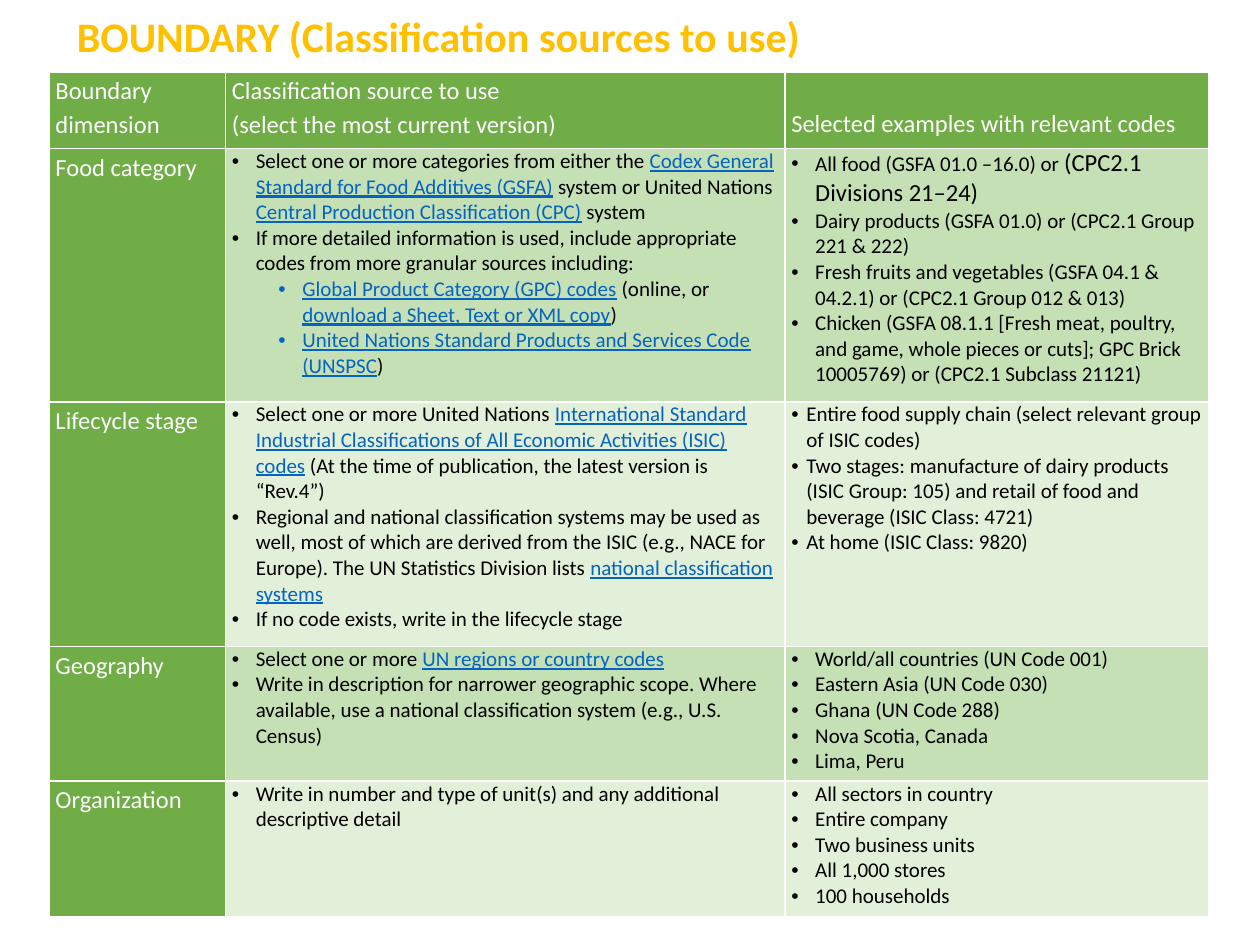
from lxml.etree import SubElement as Sub
from pptx import Presentation
from pptx.dml.color import RGBColor
from pptx.enum.text import MSO_ANCHOR as Anchor, PP_ALIGN as Align
from pptx.oxml.ns import qn
from pptx.util import Inches, Pt

GREEN, MID, PALE = "70AD47", "C5E0B4", "E2F0D9"
WHITE, BLACK, BLUE, GOLD = "FFFFFF", "000000", "0563C1", "FFC000"
COL_WIDTHS = [1.4, 4.44, 3.36]
ROW_HEIGHTS = [0.61, 2.01, 1.94, 1.07, 1.08]
LINK = {"color": BLUE, "underline": True}
LARGE = {"size": 14}

HEADERS = [
    ["Boundary dimension"],
    ["Classification source to use", "(select the most current version)"],
    ["Selected examples with relevant codes"],
]
ROWS = [
    ("Food category", [
        (0, ["Select one or more categories from either the ",
             ("Codex General Standard for Food Additives (GSFA)", LINK),
             " system or United Nations ",
             ("Central Production Classification (CPC)", LINK), " system"]),
        (0, ["If more detailed information is used, include appropriate codes "
             "from more granular sources including:"]),
        (1, [("Global Product Category (GPC) codes", LINK), " (online, or ",
             ("download a Sheet, Text or XML copy", LINK), ")"]),
        (1, [("United Nations Standard Products and Services Code (UNSPSC", LINK), ")"]),
    ], [
        ["All food (GSFA 01.0 –16.0) or ", ("(CPC2.1 Divisions 21–24)", LARGE)],
        ["Dairy products (GSFA 01.0) or (CPC2.1 Group 221 & 222)"],
        ["Fresh fruits and vegetables (GSFA 04.1 & 04.2.1) or (CPC2.1 Group 012 & 013)"],
        ["Chicken (GSFA 08.1.1 [Fresh meat, poultry, and game, whole pieces or cuts]; "
         "GPC Brick 10005769) or (CPC2.1 Subclass 21121)"],
    ], 0.19),
    ("Lifecycle stage", [
        (0, ["Select one or more United Nations ",
             ("International Standard Industrial Classifications of All Economic "
              "Activities (ISIC) codes", LINK),
             " (At the time of publication, the latest version is “Rev.4”)"]),
        (0, ["Regional and national classification systems may be used as well, most of "
             "which are derived from the ISIC (e.g., NACE for Europe). The UN Statistics "
             "Division lists ", ("national classification systems", LINK)]),
        (0, ["If no code exists, write in the lifecycle stage"]),
    ], [
        ["Entire food supply chain (select relevant group of ISIC codes)"],
        ["Two stages: manufacture of dairy products (ISIC Group: 105) and retail of "
         "food and beverage (ISIC Class: 4721)"],
        ["At home (ISIC Class: 9820)"],
    ], 0.12),
    ("Geography", [
        (0, ["Select one or more ", ("UN regions or country codes", LINK)]),
        (0, ["Write in description for narrower geographic scope. Where available, use a "
             "national classification system (e.g., U.S. Census)"]),
    ], [
        ["World/all countries (UN Code 001)"], ["Eastern Asia (UN Code 030)"],
        ["Ghana (UN Code 288)"], ["Nova Scotia, Canada"], ["Lima, Peru"],
    ], 0.19),
    ("Organization", [
        (0, ["Write in number and type of unit(s) and any additional descriptive detail"]),
    ], [
        ["All sectors in country"], ["Entire company"], ["Two business units"],
        ["All 1,000 stores"], ["100 households"],
    ], 0.19),
]


def rgb(value):
    return RGBColor.from_string(value)


def add_run(p, text, size, color, bold=False, underline=False):
    r = p.add_run()
    r.text = text
    r.font.name = "Calibri"
    r.font.size = Pt(size)
    r.font.bold = bold
    r.font.underline = underline
    r.font.color.rgb = rgb(color)


def next_paragraph(tf, index):
    return tf.add_paragraph() if index else tf.paragraphs[0]


def set_bullet(p, left, hang):
    pPr = p._p.get_or_add_pPr()
    pPr.set("marL", str(Inches(left)))
    pPr.set("indent", str(-Inches(hang)))
    Sub(pPr, qn("a:buFont")).set("typeface", "Arial")
    Sub(pPr, qn("a:buChar")).set("char", "•")


def style_cell(cell, fill):
    cell.margin_left = cell.margin_right = Inches(0.05)
    cell.margin_top = cell.margin_bottom = 0
    tcPr = cell._tc.get_or_add_tcPr()
    for side in "LRTB":
        ln = Sub(tcPr, qn(f"a:ln{side}"))
        ln.set("w", str(Pt(1)))
        Sub(Sub(ln, qn("a:solidFill")), qn("a:srgbClr")).set("val", WHITE)
    cell.fill.solid()
    cell.fill.fore_color.rgb = rgb(fill)


def fill_heading(cell, lines):
    style_cell(cell, GREEN)
    for i, line in enumerate(lines):
        p = next_paragraph(cell.text_frame, i)
        p.line_spacing = 1.15
        add_run(p, line, 14, WHITE)


def fill_bullets(cell, items, fill, hang=0.19):
    style_cell(cell, fill)
    for i, (level, runs) in enumerate(items):
        p = next_paragraph(cell.text_frame, i)
        p.level = level
        set_bullet(p, hang + 0.37 * level, hang)
        for run in runs:
            text, style = (run, {}) if isinstance(run, str) else run
            add_run(p, text, **{"size": 12, "color": BLACK, **style})


def add_title(s, text):
    sp = s.shapes.title
    sp.left, sp.top, sp.width, sp.height = map(Inches, (0.51, 0.02, 9.25, 0.58))
    tf = sp.text_frame
    tf.word_wrap = True
    tf.vertical_anchor = Anchor.MIDDLE
    p = tf.paragraphs[0]
    p.alignment = Align.LEFT
    p.line_spacing = 0.9
    add_run(p, text, 24, GOLD, bold=True)


def add_boundary_table(s):
    frame = s.shapes.add_table(len(ROW_HEIGHTS), len(COL_WIDTHS), Inches(0.39), Inches(0.57),
                               Inches(sum(COL_WIDTHS)), Inches(sum(ROW_HEIGHTS)))
    table = frame.table
    table.first_row = table.horz_banding = False
    for column, width in zip(table.columns, COL_WIDTHS):
        column.width = Inches(width)
    for row, height in zip(table.rows, ROW_HEIGHTS):
        row.height = Inches(height)
    for col, lines in enumerate(HEADERS):
        fill_heading(table.cell(0, col), lines)
    examples_header = table.cell(0, 2)
    examples_header.vertical_anchor = Anchor.BOTTOM
    examples_header.margin_bottom = Inches(0.08)
    for row, (dimension, sources, examples, hang) in enumerate(ROWS, 1):
        fill = MID if row % 2 else PALE
        fill_heading(table.cell(row, 0), [dimension])
        fill_bullets(table.cell(row, 1), sources, fill)
        fill_bullets(table.cell(row, 2), [(0, runs) for runs in examples], fill, hang)


def main():
    prs = Presentation()
    prs.slide_width, prs.slide_height = Inches(10), Inches(7.5)
    s = prs.slides.add_slide(prs.slide_layouts[5])
    add_boundary_table(s)
    add_title(s, "BOUNDARY (Classification sources to use)")
    prs.save("out.pptx")


if __name__ == "__main__":
    main()
